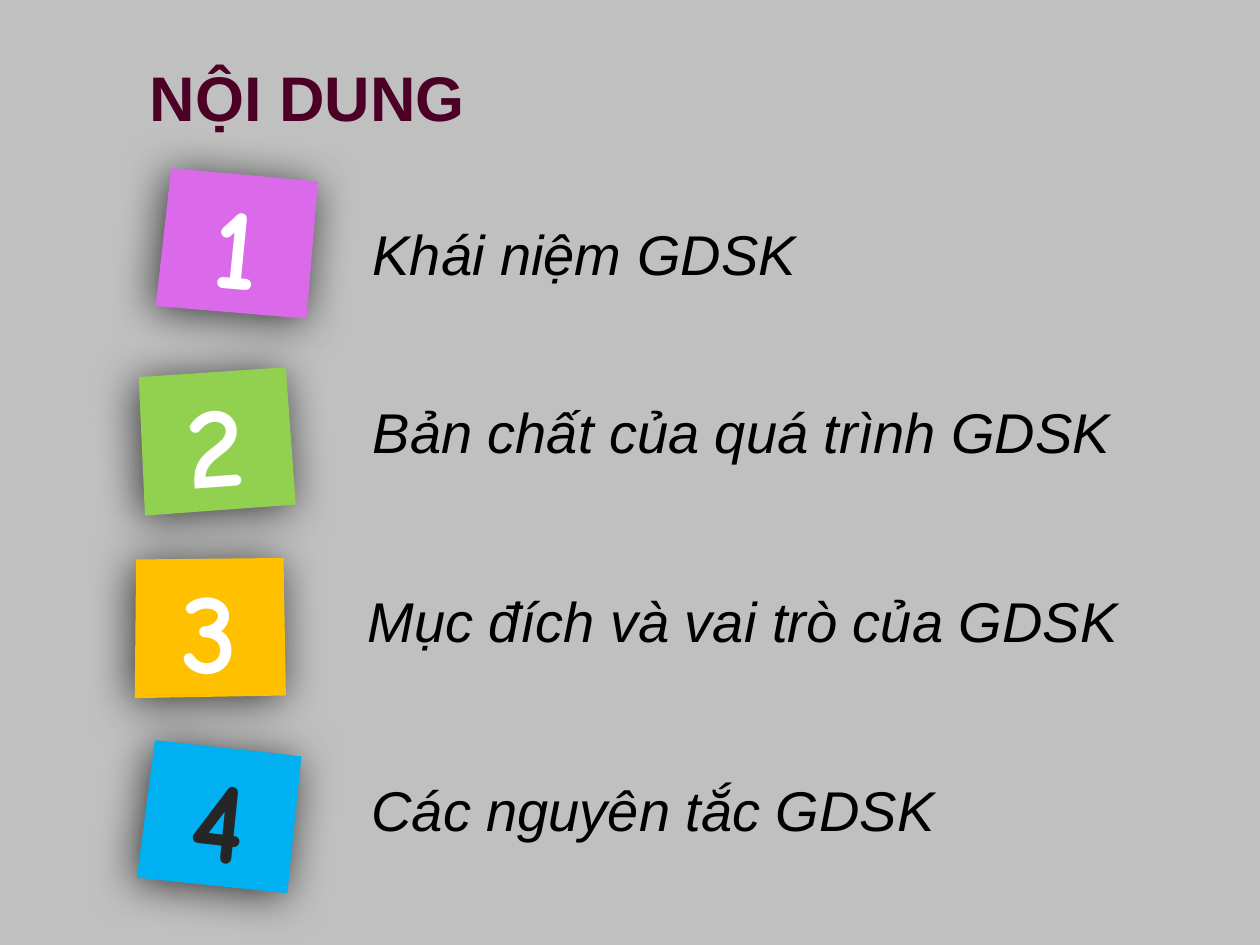
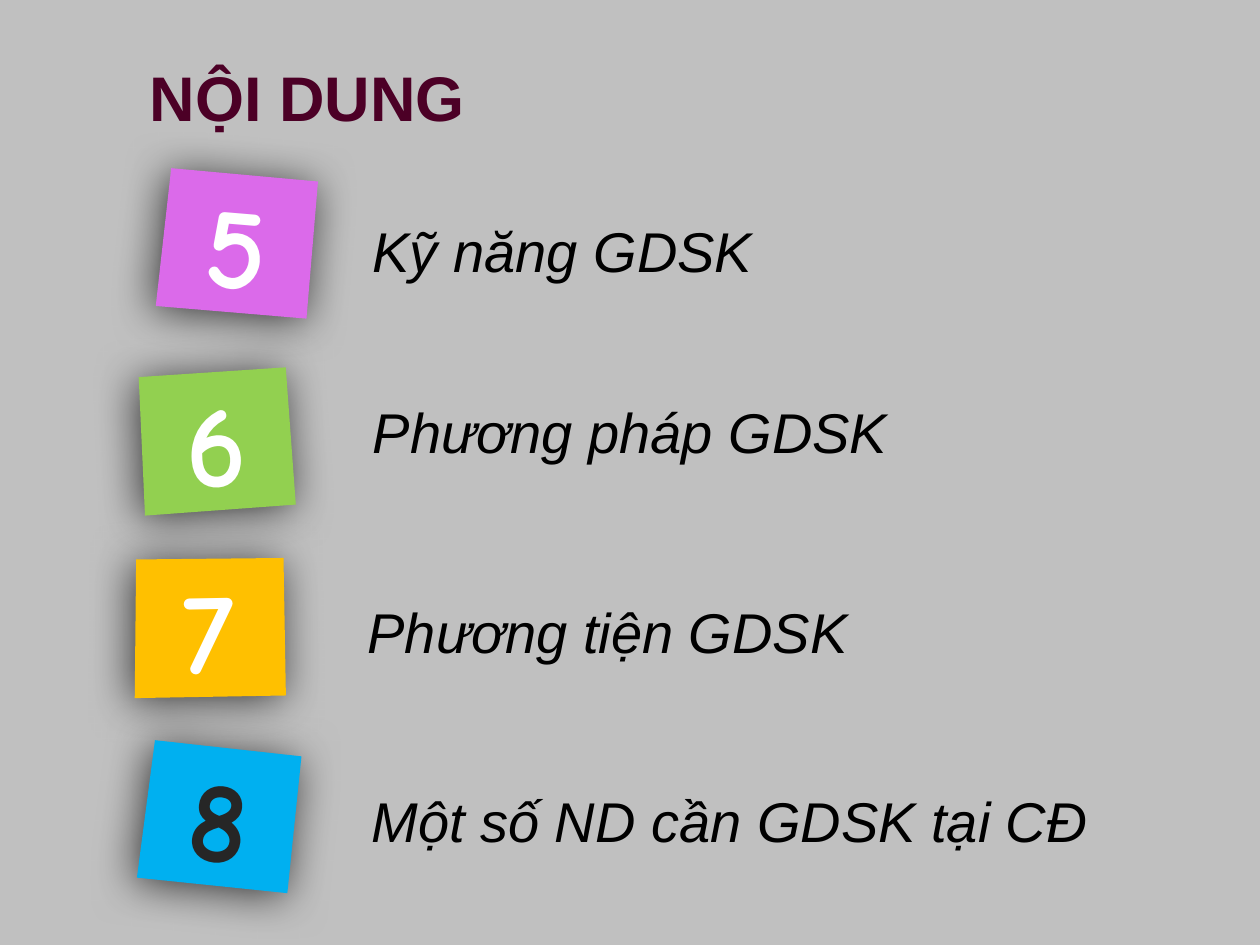
import pptx
import pptx.dml.color
import pptx.enum.text
import pptx.oxml
import pptx.oxml.ns
import pptx.util

Pt = pptx.util.Pt
ALIGN = pptx.enum.text.PP_ALIGN
ANCHOR = pptx.enum.text.MSO_ANCHOR
GROW = pptx.enum.text.MSO_AUTO_SIZE.SHAPE_TO_FIT_TEXT

COLORS = {
    "background": "C0C0C0",
    "title": "4C0026",
    "label": "000000",
    "pink": "DB6AEA",
    "green": "92D050",
    "yellow": "FFC000",
    "blue": "00B0F0",
    "light_digit": "FFFFFF",
    "dark_digit": "262626",
    "shadow": "000000",
}
TITLE_BOX = (78.5, 29.5, 539.3, 51.1)
NOTE_SIZE = (86.4, 79.2)
NOTE_CORNERS = [(2.2, 0), (86.4, 0.6), (86.4, 79.2), (0, 79.2)]
LABEL_HEIGHT = 46.1
ROWS = [
    {"note": (92.2, 99.4), "angle": 4.8, "fill": "pink", "digit": "light_digit",
     "label": (205.9, 460), "align": ALIGN.JUSTIFY},
    {"note": (79.9, 212.4), "angle": -4.2, "fill": "green", "digit": "light_digit",
     "label": (205.9, 454.3), "align": ALIGN.JUSTIFY},
    {"note": (76.3, 319), "angle": -1, "fill": "yellow", "digit": "light_digit",
     "label": (203, 454.3), "align": ALIGN.JUSTIFY},
    {"note": (82.1, 427), "angle": 5.9, "fill": "blue", "digit": "dark_digit",
     "label": (205.2, 460.8), "align": ALIGN.LEFT},
]
SLIDES = [
    (1, [("Khái niệm GDSK", 121.7),
         ("Bản chất của quá trình GDSK", 223.9),
         ("Mục đích và vai trò của GDSK", 331.9),
         ("Các nguyên tắc GDSK", 439.9)]),
    (5, [("Kỹ năng GDSK", 120.2),
         ("Phương pháp GDSK", 223.9),
         ("Phương tiện GDSK", 337.7),
         ("Một số ND cần GDSK tại CĐ", 445.7)]),
]


def rgb(name):
    return pptx.dml.color.RGBColor.from_string(COLORS[name])


def write(tf, text, size, color, align, font="Arial", bold=False, italic=False):
    tf.text = text
    p = tf.paragraphs[0]
    p.alignment = align
    f = p.runs[0].font
    f.name, f.size, f.bold, f.italic = font, Pt(size), bold, italic
    f.color.rgb = rgb(color)


def add_title(s, box, text):
    sp = s.shapes.title
    sp.left, sp.top, sp.width, sp.height = map(Pt, box)
    tf = sp.text_frame
    tf.vertical_anchor = ANCHOR.MIDDLE
    tf.auto_size = GROW
    write(tf, text, 36, "title", ALIGN.LEFT, bold=True)


def add_soft_shadow(sp):
    sp.shadow.inherit = False
    effects = sp._element.spPr.find(pptx.oxml.ns.qn("a:effectLst"))
    effects.append(pptx.oxml.parse_xml(
        f'<a:outerShdw {pptx.oxml.ns.nsdecls("a")} blurRad="{Pt(25)}" dist="{Pt(3)}" '
        f'dir="8100000" algn="tr" rotWithShape="0"><a:srgbClr val="{COLORS["shadow"]}">'
        '<a:alpha val="70000"/></a:srgbClr></a:outerShdw>'))


def add_note(s, box, angle, fill, number, digit_color):
    left, top, width, height = box
    scale_x, scale_y = width / NOTE_SIZE[0], height / NOTE_SIZE[1]
    points = [(Pt(left + x * scale_x), Pt(top + y * scale_y)) for x, y in NOTE_CORNERS]
    builder = s.shapes.build_freeform(*points[0])
    builder.add_line_segments(points[1:], close=True)
    sp = builder.convert_to_shape()
    sp.rotation = angle
    sp.fill.solid()
    sp.fill.fore_color.rgb = rgb(fill)
    sp.line.fill.background()
    add_soft_shadow(sp)
    tf = sp.text_frame
    tf.margin_left = tf.margin_right = tf.margin_top = tf.margin_bottom = Pt(3.6)
    tf.vertical_anchor = ANCHOR.MIDDLE
    write(tf, str(number), 66, digit_color, ALIGN.CENTER, "Comic Neue", bold=True)


def add_label(s, box, text, align):
    tf = s.shapes.add_textbox(*map(Pt, box)).text_frame
    tf.word_wrap = True
    tf.auto_size = GROW
    write(tf, text, 32, "label", align, italic=True)


def add_contents_slide(prs, first_number, topics):
    s = prs.slides.add_slide(prs.slide_layouts[5])
    add_title(s, TITLE_BOX, "NỘI DUNG")
    for number, (row, (text, top)) in enumerate(zip(ROWS, topics), first_number):
        add_note(s, row["note"] + NOTE_SIZE, row["angle"], row["fill"], number, row["digit"])
        left, width = row["label"]
        add_label(s, (left, top, width, LABEL_HEIGHT), text, row["align"])


def main():
    prs = pptx.Presentation()
    prs.slide_width, prs.slide_height = Pt(720), Pt(540)
    background = prs.slide_master.background.fill
    background.solid()
    background.fore_color.rgb = rgb("background")
    for first_number, topics in SLIDES:
        add_contents_slide(prs, first_number, topics)
    prs.save("out.pptx")


if __name__ == "__main__":
    main()
